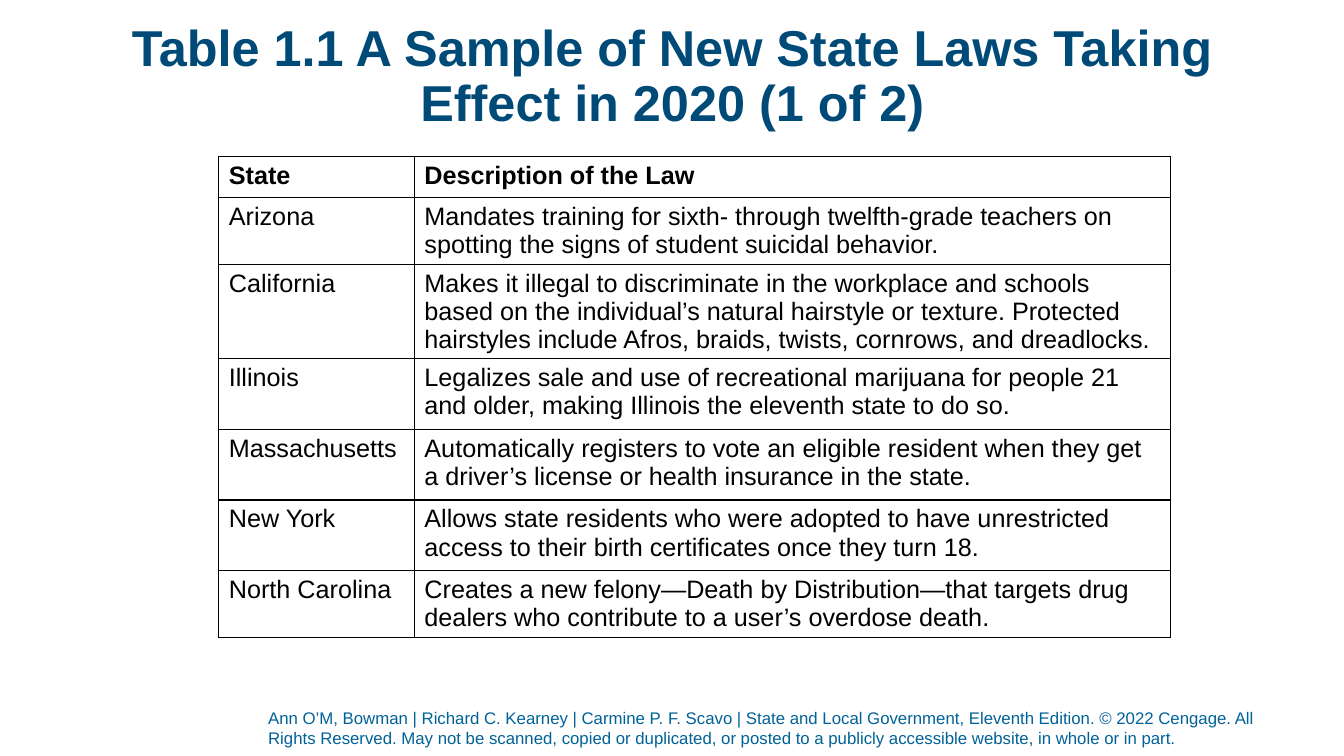
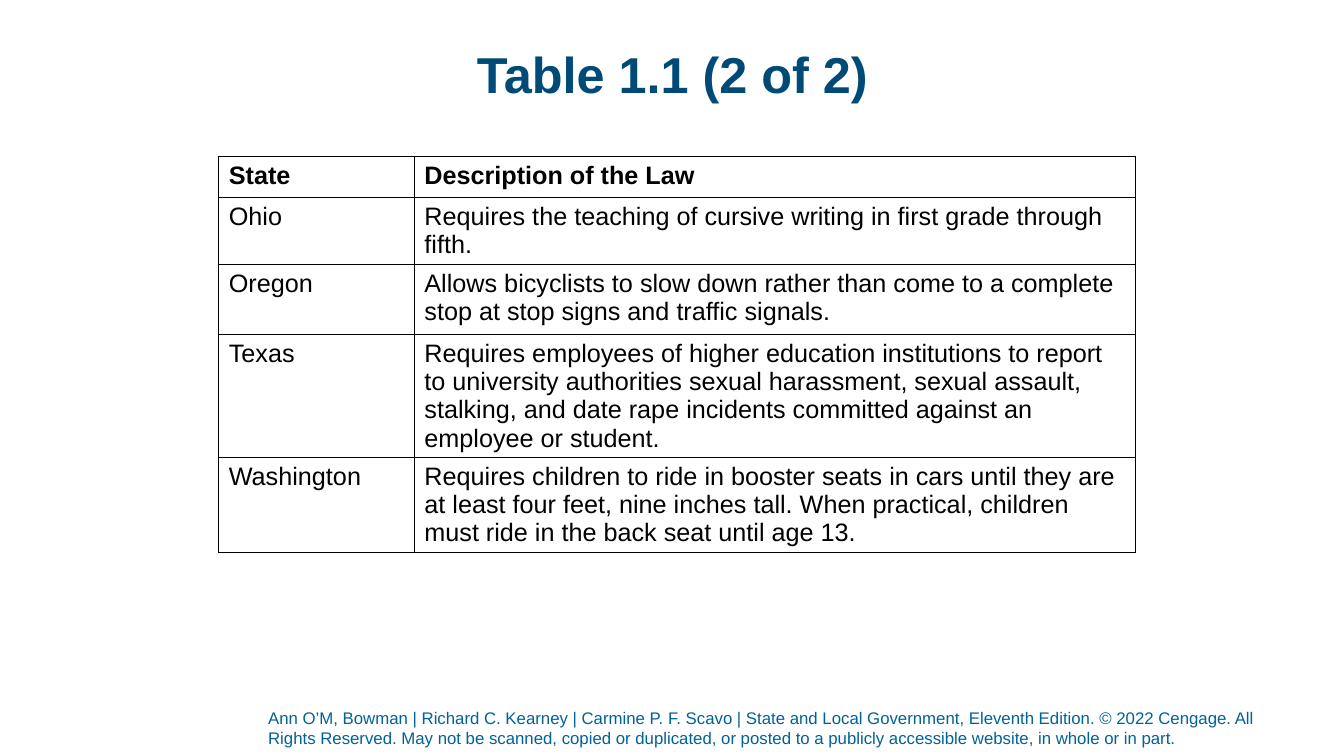
import pptx
import pptx.dml.color
import pptx.enum.text
import pptx.oxml
import pptx.util
from dataclasses import dataclass
from pptx.oxml import ns

Inches = pptx.util.Inches
Pt = pptx.util.Pt
Align = pptx.enum.text.PP_ALIGN
Anchor = pptx.enum.text.MSO_ANCHOR
Fit = pptx.enum.text.MSO_AUTO_SIZE


# Colours and type sizes
@dataclass(frozen=True)
class Theme:
    face: str = "Arial"
    title: str = "004A78"
    foot: str = "006298"
    ink: str = "000000"
    big: int = 36
    body: int = 18
    small: int = 12
    rule: int = 1


THEME = Theme()

# Text and table data
FOOTER = (
    "Ann O’M, Bowman | Richard C. Kearney | Carmine P. F. Scavo | "
    "State and Local Government, Eleventh Edition. © 2022 Cengage. "
    "All Rights Reserved. May not be scanned, copied or duplicated, or posted "
    "to a publicly accessible website, in whole or in part."
)
HEAD = ("State", "Description of the Law", 0.41)

# Each row: state, law, row height
FIRST = [
    ("Arizona", "Mandates training for sixth- through twelfth-grade teachers "
     "on spotting the signs of student suicidal behavior.", 0.66),
    ("California", "Makes it illegal to discriminate in the workplace and "
     "schools based on the individual’s natural hairstyle or texture. "
     "Protected hairstyles include Afros, braids, twists, cornrows, and "
     "dreadlocks.", 0.94),
    ("Illinois", "Legalizes sale and use of recreational marijuana for people "
     "21 and older, making Illinois the eleventh state to do so.", 0.7),
    ("Massachusetts", "Automatically registers to vote an eligible resident "
     "when they get a driver’s license or health insurance in the state.", 0.7),
    ("New York", "Allows state residents who were adopted to have "
     "unrestricted access to their birth certificates once they turn 18.", 0.7),
    ("North Carolina", "Creates a new felony—Death by Distribution—that "
     "targets drug dealers who contribute to a user’s overdose death.", 0.66),
]
SECOND = [
    ("Ohio", "Requires the teaching of cursive writing in first grade "
     "through fifth.", 0.66),
    ("Oregon", "Allows bicyclists to slow down rather than come to a complete "
     "stop at stop signs and traffic signals.", 0.7),
    ("Texas", "Requires employees of higher education institutions to report "
     "to university authorities sexual harassment, sexual assault, stalking, "
     "and date rape incidents committed against an employee or student.", 1.22),
    ("Washington", "Requires children to ride in booster seats in cars until "
     "they are at least four feet, nine inches tall. When practical, children "
     "must ride in the back seat until age 13.", 0.94),
]

# Title and width of the law column for each slide
PAGES = [
    ("Table 1.1 A Sample of New State Laws Taking Effect in 2020 (1 of 2)",
     7.5, FIRST),
    ("Table 1.1 (2 of 2)", 7.15, SECOND),
]


# Formatting helpers
def apply(item, values):
    for name, value in values.items():
        setattr(item, name, value)


def style(para, size, color, bold=False):
    apply(para.font, {"name": THEME.face, "size": Pt(size), "bold": bold})
    para.font.color.rgb = pptx.dml.color.RGBColor.from_string(color)


def place(shape, left, top, width, height):
    apply(shape, {"left": Inches(left), "top": Inches(top),
                  "width": Inches(width), "height": Inches(height)})


def frame(shape, text, bottom=0):
    box = shape.text_frame
    box.text = text
    apply(box, {"word_wrap": True, "auto_size": Fit.NONE,
                "vertical_anchor": Anchor.MIDDLE,
                "margin_left": 0, "margin_right": 0,
                "margin_top": 0, "margin_bottom": Inches(bottom)})
    return box.paragraphs[0]


def border(cell):
    props = cell._tc.get_or_add_tcPr()
    for side in "LRTB":
        props.append(pptx.oxml.parse_xml(
            f'<a:ln{side} {ns.nsdecls("a")} w="{Pt(THEME.rule)}"><a:solidFill>'
            f'<a:srgbClr val="{THEME.ink}"/></a:solidFill></a:ln{side}>'))
    cell.fill.background()


# Slide parts
def add_title(slide, text):
    title = slide.shapes.title
    place(title, 0.92, 0.4, 11.5, 0.74)
    para = frame(title, text)
    apply(para, {"alignment": Align.CENTER, "line_spacing": 0.9})
    style(para, THEME.big, THEME.title, True)


def add_foot(slide):
    box = slide.shapes.add_textbox(
        Inches(2.66), Inches(7.02), Inches(10.26), Inches(0.45))
    style(frame(box, FOOTER, 0.05), THEME.small, THEME.foot)


def add_grid(slide, rows, wide):
    cols = (1.94, wide)
    table = slide.shapes.add_table(
        len(rows), len(cols), Inches(2.17), Inches(1.55),
        Inches(sum(cols)), Inches(sum(row[-1] for row in rows))).table
    apply(table, {"first_row": True, "horz_banding": False})
    for col, width in zip(table.columns, cols):
        col.width = Inches(width)
    for index, (*texts, height) in enumerate(rows):
        table.rows[index].height = Inches(height)
        for cell, text in zip(table.rows[index].cells, texts):
            cell.text = text
            style(cell.text_frame.paragraphs[0], THEME.body, THEME.ink,
                  index == 0)
            border(cell)


def main():
    deck = pptx.Presentation()
    apply(deck, {"slide_width": Inches(13.33), "slide_height": Inches(7.5)})
    for title, wide, laws in PAGES:
        slide = deck.slides.add_slide(deck.slide_layouts[5])
        add_foot(slide)
        add_title(slide, title)
        add_grid(slide, [HEAD, *laws], wide)
    deck.save("out.pptx")


if __name__ == "__main__":
    main()
